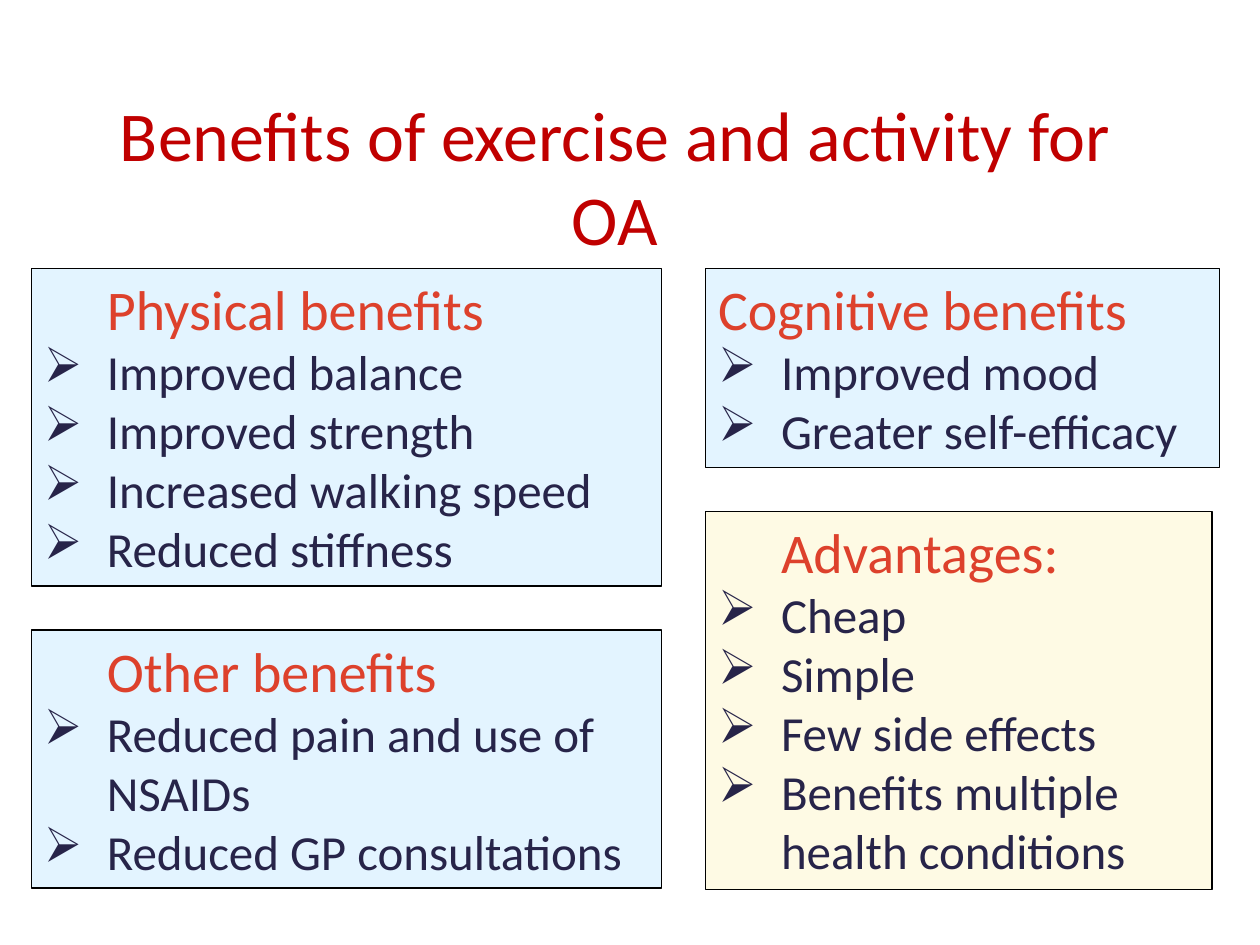
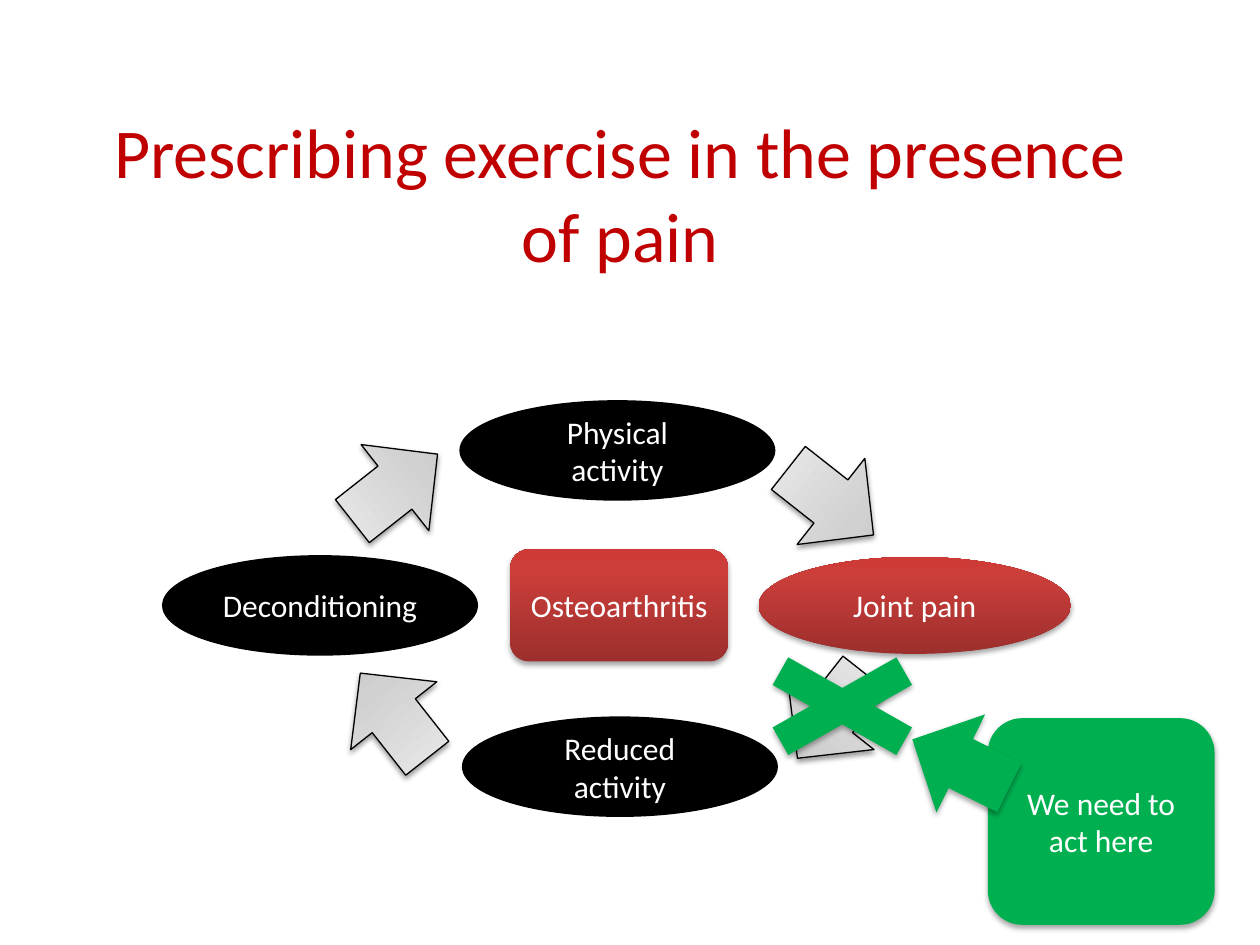
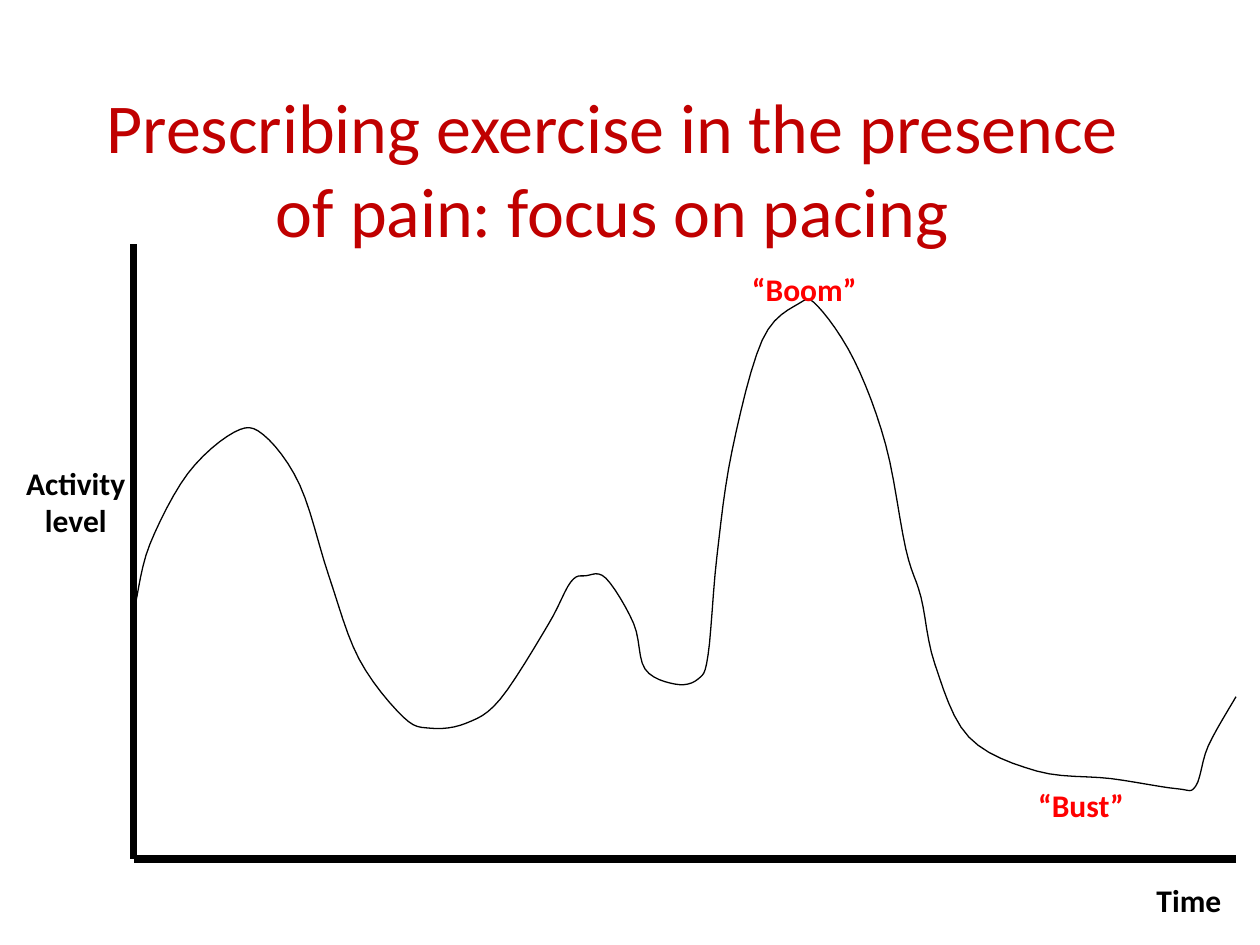
from lxml import etree
from pptx import Presentation
from pptx.dml.color import RGBColor
from pptx.enum import shapes, text
from pptx.oxml import parse_xml
from pptx.oxml.ns import nsdecls, qn
from pptx.util import Inches, Pt

FONT = "Calibri"
TITLE, HEADING, BODY = "C00000", "DD412C", "272449"
BLACK, WHITE, RED, GREEN = "000000", "FFFFFF", "FF0000", "00B050"
BLUE_PANEL, CREAM_PANEL = "E3F4FF", "FEFAE4"
RED_GRADIENT = [(0, "9C2F2D"), (80, "CB3E3A"), (100, "CE3B37")]
GREY_GRADIENT = [(0, "BDBDBD"), (35, "D1D1D1"), (100, "EEEEEE")]
SHAPE = shapes.MSO_SHAPE
CENTER = text.PP_ALIGN.CENTER

# heading, heading indent, bullets, fill, (left, top, width, height)
PANELS = [
    ("Physical benefits", 0.5,
     ["Improved balance", "Improved strength", "Increased walking speed",
      "Reduced stiffness"],
     BLUE_PANEL, (0.25, 2.13, 5, 2.52)),
    ("Cognitive benefits", 0,
     ["Improved mood", "Greater self-efficacy"],
     BLUE_PANEL, (5.6, 2.13, 4.08, 1.58)),
    ("Other benefits", 0.5,
     ["Reduced pain and use of NSAIDs", "Reduced GP consultations"],
     BLUE_PANEL, (0.25, 5, 5, 2.05)),
    ("Advantages:", 0.5,
     ["Cheap", "Simple", "Few side effects", "Benefits multiple health conditions"],
     CREAM_PANEL, (5.6, 4.06, 4.02, 3)),
]

# label, left, top, fill
CYCLE_SIZE = (2.48, 0.77)
CYCLE = [
    ("Physical activity", 3.66, 3.19, BLACK),
    ("Joint pain", 6.02, 4.42, RED_GRADIENT),
    ("Reduced activity", 3.68, 5.7, BLACK),
    ("Deconditioning", 1.3, 4.42, BLACK),
]

# left, top, rotation, flipped
ARROW_SIZE = (0.87, 0.86)
CYCLE_ARROWS = [
    (6.16, 3.55, 308.2, False),
    (6.16, 5.25, 38.2, False),
    (2.7, 3.44, 51.8, True),
    (2.69, 5.25, 321.8, True),
]

# Points the activity curve passes through
ACTIVITY_CURVE = [
    (1.08, 4.77), (1.19, 4.32), (1.49, 3.76), (1.86, 3.43), (2.09, 3.45),
    (2.38, 3.85), (2.61, 4.57), (2.85, 5.23), (3.2, 5.69), (3.42, 5.78),
    (3.7, 5.74), (3.97, 5.55), (4.35, 4.96), (4.53, 4.62), (4.65, 4.57),
    (4.81, 4.59), (5.03, 4.95), (5.12, 5.31), (5.36, 5.43), (5.54, 5.39),
    (5.62, 5.2), (5.69, 4.42), (5.81, 3.58), (6.05, 2.7), (6.34, 2.41),
    (6.49, 2.43), (6.78, 2.86), (7.03, 3.53), (7.19, 4.36), (7.31, 4.74),
    (7.42, 5.27), (7.69, 5.85), (8.23, 6.12), (8.82, 6.18), (9.34, 6.26),
    (9.49, 6.24), (9.59, 5.92), (9.81, 5.53),
]
CURVE_STEPS = 6
AXIS_ORIGIN = (1.06, 6.82)
AXIS_ENDS = [(1.06, 1.94), (9.81, 6.82)]

# lines, colour, (left, top, width, height)
CHART_LABELS = [
    (["Activity", "level"], BLACK, (0.11, 3.63, 1, 0.71)),
    (["Time"], BLACK, (9.08, 6.94, 0.72, 0.4)),
    (["“Boom”"], RED, (5.87, 2.09, 1.04, 0.4)),
    (["“Bust”"], RED, (8.14, 6.19, 0.89, 0.4)),
]


def rgb(color):
    return RGBColor.from_string(color)


def inches(values):
    return [Inches(v) for v in values]


def style(p, size, color, bold=False):
    for r in p.runs:
        r.font.name, r.font.size, r.font.bold = FONT, Pt(size), bold
        r.font.color.rgb = rgb(color)


def add_title(slide, title, left, top, width=8.5):
    tf = slide.shapes.add_textbox(*inches((left, top, width, 1.45))).text_frame
    tf.word_wrap = True
    p = tf.paragraphs[0]
    p.text, p.alignment = title, CENTER
    style(p, 40, TITLE)


def paint(sp, fill):
    """Fill with one colour, or upwards with a list of gradient stops."""
    if isinstance(fill, str):
        sp.fill.solid()
        sp.fill.fore_color.rgb = rgb(fill)
        return
    stops = "".join(f'<a:gs pos="{pos * 1000}"><a:srgbClr val="{color}"/></a:gs>'
                    for pos, color in fill)
    gradient = parse_xml(
        f'<a:gradFill {nsdecls("a")} rotWithShape="1"><a:gsLst>{stops}</a:gsLst>'
        '<a:lin ang="16200000" scaled="0"/></a:gradFill>')
    sp.fill.background()
    plain = sp._element.spPr.find(qn("a:noFill"))
    plain.getparent().replace(plain, gradient)


def add_shape(slide, kind, box, fill, line=None, shadow=0):
    """Line is a width in points; shadow is an opacity in percent."""
    sp = slide.shapes.add_shape(kind, *inches(box))
    paint(sp, fill)
    if line:
        sp.line.color.rgb = rgb(BLACK)
        sp.line.width = Pt(line)
    else:
        sp.line.fill.background()
    sp.shadow.inherit = False
    if shadow:
        sp._element.spPr.find(qn("a:effectLst")).append(parse_xml(
            f'<a:outerShdw {nsdecls("a")} blurRad="40000" dist="23000" dir="5400000" '
            f'rotWithShape="0"><a:srgbClr val="{BLACK}"><a:alpha val="{shadow * 1000}"/>'
            '</a:srgbClr></a:outerShdw>'))
    return sp


def add_node(slide, kind, label, box, fill, line=None, shadow=0):
    tf = add_shape(slide, kind, box, fill, line, shadow).text_frame
    tf.word_wrap = True
    tf.vertical_anchor = text.MSO_ANCHOR.MIDDLE
    p = tf.paragraphs[0]
    p.text, p.alignment = label, CENTER
    style(p, 18, WHITE)


def add_arrow(slide, left, top, rotation, flipped, fill, line=None, shadow=35):
    sp = add_shape(slide, SHAPE.DOWN_ARROW, (left, top, *ARROW_SIZE), fill, line, shadow)
    sp.rotation = rotation
    if flipped:
        sp._element.spPr.find(qn("a:xfrm")).set("flipV", "1")


def indent(p, left, first=0.0, bullet=None):
    pPr = p._p.get_or_add_pPr()
    pPr.set("marL", str(Inches(left)))
    pPr.set("indent", str(Inches(first)))
    if bullet:
        etree.SubElement(pPr, qn("a:buChar")).set("char", bullet)


def add_panel(slide, heading, heading_indent, bullets, fill, box):
    tf = add_shape(slide, SHAPE.RECTANGLE, box, fill, line=1).text_frame
    tf.word_wrap = True
    tf.vertical_anchor = text.MSO_ANCHOR.TOP
    p = tf.paragraphs[0]
    p.text, p.alignment = heading, text.PP_ALIGN.LEFT
    indent(p, heading_indent)
    style(p, 32, HEADING)
    for bullet in bullets:
        p = tf.add_paragraph()
        p.text, p.alignment = bullet, text.PP_ALIGN.LEFT
        indent(p, 0.5, -0.5, "➢")
        style(p, 28, BODY)


def add_axis(slide, start, end):
    line = slide.shapes.add_connector(
        shapes.MSO_CONNECTOR.STRAIGHT, *inches(start + end))
    line.line.color.rgb = rgb(BLACK)
    line.line.width = Pt(4.5)
    etree.SubElement(line._element.spPr, qn("a:effectLst"))


def smooth(points):
    """Points of a Catmull-Rom spline through the given points."""
    padded = [points[0], *points, points[-1]]
    result = [points[0]]
    for a, b, c, d in zip(padded, padded[1:], padded[2:], padded[3:]):
        for step in range(1, CURVE_STEPS + 1):
            t = step / CURVE_STEPS
            result.append(tuple(
                q + t / 2 * (r - p + t * (2 * p - 5 * q + 4 * r - s
                                          + t * (3 * (q - r) + s - p)))
                for p, q, r, s in zip(a, b, c, d)))
    return result


def add_curve(slide, points):
    start, *rest = [inches(point) for point in smooth(points)]
    builder = slide.shapes.build_freeform(*start)
    builder.add_line_segments(rest, close=False)
    sp = builder.convert_to_shape()
    sp.fill.background()
    sp.line.color.rgb = rgb(BLACK)
    sp.line.width = Pt(0.75)
    sp.shadow.inherit = False


def add_label(slide, lines, color, box):
    tf = slide.shapes.add_textbox(*inches(box)).text_frame
    tf.word_wrap = False
    tf.auto_size = text.MSO_AUTO_SIZE.SHAPE_TO_FIT_TEXT
    tf.text = "\n".join(lines)
    for p in tf.paragraphs:
        style(p, 18, color, bold=True)
    for p in tf.paragraphs[1:]:
        p.alignment = CENTER


def benefits_slide(slide):
    add_title(slide, "Benefits of exercise and activity for OA", 0.7, 0.68, 8.36)
    for panel in PANELS:
        add_panel(slide, *panel)


def cycle_slide(slide):
    add_title(slide, "Prescribing exercise in the presence of pain", 0.67, 0.81)
    for label, left, top, fill in CYCLE:
        look = {"line": 2} if fill == BLACK else {"shadow": 35}
        add_node(slide, SHAPE.OVAL, label, (left, top, *CYCLE_SIZE), fill, **look)
    add_node(slide, SHAPE.ROUNDED_RECTANGLE, "Osteoarthritis",
             (4.05, 4.36, 1.73, 0.89), RED_GRADIENT, shadow=35)
    for arrow in CYCLE_ARROWS:
        add_arrow(slide, *arrow, GREY_GRADIENT, line=0.75, shadow=38)
    add_node(slide, SHAPE.ROUNDED_RECTANGLE, "We need to act here",
             (7.84, 5.7, 1.8, 1.64), GREEN, shadow=35)
    add_shape(slide, SHAPE.MATH_MULTIPLY, (5.74, 5.07, 1.89, 1.07), GREEN, shadow=35)
    add_arrow(slide, 7.19, 5.63, 296.4, True, GREEN)


def pacing_slide(slide):
    add_title(slide, "Prescribing exercise in the presence of pain: focus on pacing",
              0.61, 0.61)
    add_curve(slide, ACTIVITY_CURVE)
    for end in AXIS_ENDS:
        add_axis(slide, end, AXIS_ORIGIN)
    for label in CHART_LABELS:
        add_label(slide, *label)


def main():
    prs = Presentation()
    prs.slide_width, prs.slide_height = Inches(10), Inches(7.5)
    for build in (benefits_slide, cycle_slide, pacing_slide):
        build(prs.slides.add_slide(prs.slide_layouts[6]))
    prs.save("out.pptx")


if __name__ == "__main__":
    main()
